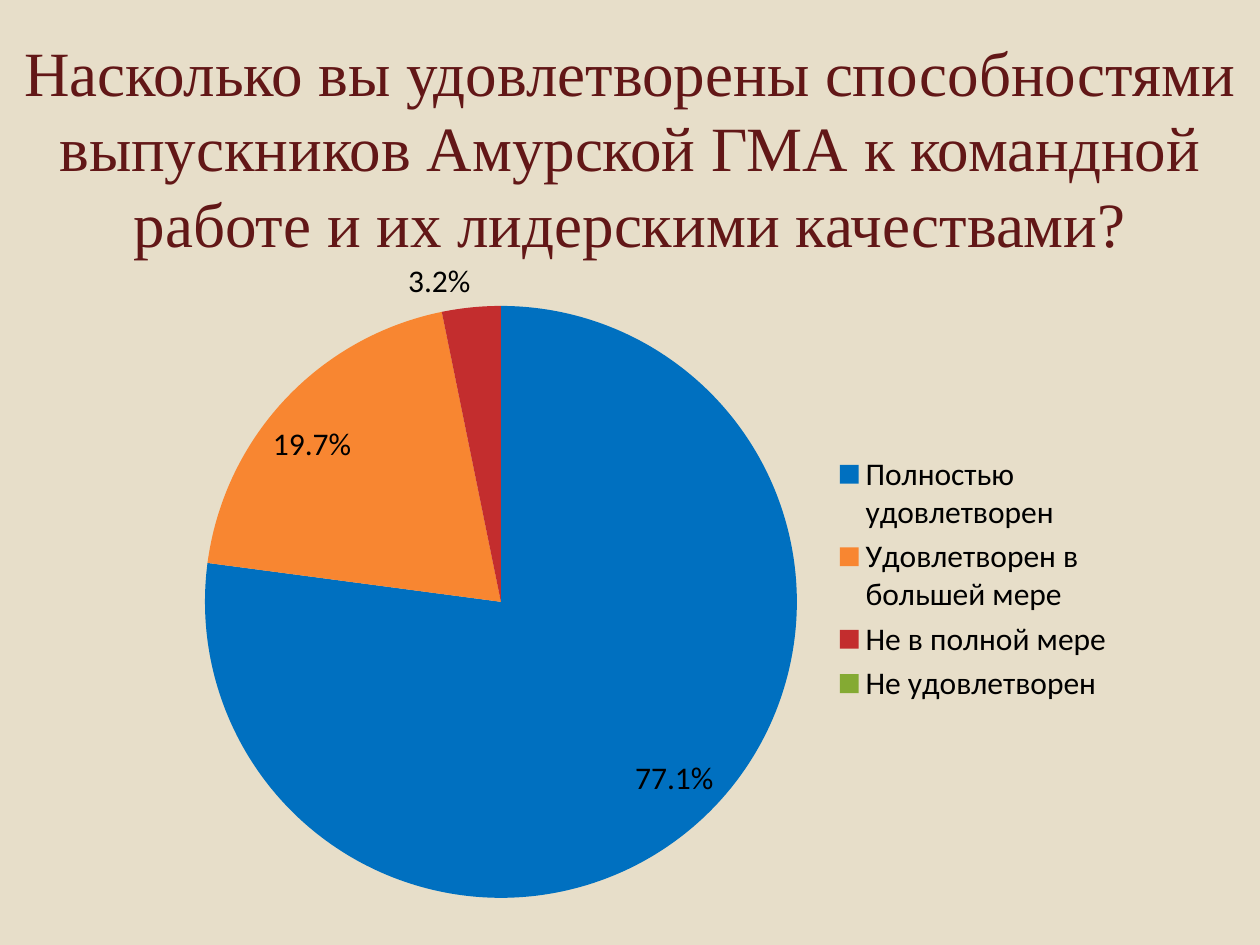
from dataclasses import dataclass

from lxml.etree import SubElement
from pptx import Presentation
from pptx.chart.data import CategoryChartData
from pptx.dml.color import RGBColor
from pptx.enum.chart import XL_CHART_TYPE as ChartType
from pptx.enum.chart import XL_LABEL_POSITION as LabelPosition
from pptx.enum.chart import XL_LEGEND_POSITION as LegendPosition
from pptx.enum.text import MSO_ANCHOR as Anchor
from pptx.enum.text import PP_ALIGN as Align
from pptx.oxml import parse_xml
from pptx.oxml.ns import nsdecls, qn
from pptx.util import Emu, Pt

PX_PER_INCH = 126


def px(length: int) -> Emu:
    return Emu(round(length * 914400 / PX_PER_INCH))


@dataclass(frozen=True)
class Theme:
    background: str = "E7DEC9"
    title: str = "621717"
    text: str = "000000"
    title_font: str = "Times New Roman"
    chart_font: str = "Calibri"
    title_size: int = 36
    chart_size: int = 18


@dataclass(frozen=True)
class Box:
    left: int
    top: int
    width: int
    height: int

    def emu(self) -> tuple:
        return px(self.left), px(self.top), px(self.width), px(self.height)


@dataclass(frozen=True)
class Answer:
    label: str
    percent: float
    color: str


THEME = Theme()
TITLE_BOX = Box(0, 38, 1260, 217)
CHART_BOX = Box(174, 244, 953, 670)
PIE_BOX = Box(205, 306, 592, 592)
TITLE = ("Насколько вы удовлетворены способностями выпускников "
         "Амурской ГМА к командной работе и их лидерскими качествами?")
ANSWERS = [
    Answer("Полностью удовлетворен", 77.1, "0070C0"),
    Answer("Удовлетворен в большей мере", 19.7, "F88631"),
    Answer("Не в полной мере", 3.2, "C32D2E"),
    Answer("Не удовлетворен", 0, "84AA33"),
]


def paint(fill, color: str) -> None:
    fill.solid()
    fill.fore_color.rgb = RGBColor.from_string(color)


def add_title(page, text: str) -> None:
    title = page.shapes.title
    title.left, title.top, title.width, title.height = TITLE_BOX.emu()
    frame = title.text_frame
    frame.text = text
    frame.word_wrap = True
    frame.vertical_anchor = Anchor.MIDDLE
    para = frame.paragraphs[0]
    para.alignment = Align.CENTER
    font = para.runs[0].font
    font.name, font.size = THEME.title_font, Pt(THEME.title_size)
    font.color.rgb = RGBColor.from_string(THEME.title)


def place_plot(chart, frame: Box, plot: Box) -> None:
    """Fix the plot area at a box inside the chart frame."""
    plot_area = chart.plots[0]._element.getparent()
    for old in plot_area.findall(qn("c:layout")):
        plot_area.remove(old)
    layout = parse_xml(f"<c:layout {nsdecls('c')}><c:manualLayout/></c:layout>")
    settings = {
        "layoutTarget": "inner", "xMode": "edge", "yMode": "edge",
        "x": round((plot.left - frame.left) / frame.width, 4),
        "y": round((plot.top - frame.top) / frame.height, 4),
        "w": round(plot.width / frame.width, 4),
        "h": round(plot.height / frame.height, 4),
    }
    for tag, value in settings.items():
        SubElement(layout[0], qn(f"c:{tag}")).set("val", str(value))
    plot_area.insert(0, layout)


def add_pie(page, answers: list[Answer]) -> None:
    data = CategoryChartData()
    data.categories = [answer.label for answer in answers]
    data.add_series("Series 1", [answer.percent for answer in answers])
    chart = page.shapes.add_chart(ChartType.PIE, *CHART_BOX.emu(), data).chart
    chart.has_title = False
    chart.font.name, chart.font.size = THEME.chart_font, Pt(THEME.chart_size)
    chart.font.color.rgb = RGBColor.from_string(THEME.text)
    chart.has_legend = True
    chart.legend.position = LegendPosition.RIGHT
    chart.legend.include_in_layout = False
    place_plot(chart, CHART_BOX, PIE_BOX)

    # Percentage labels
    plot = chart.plots[0]
    plot.vary_by_categories = True
    series = plot.series[0]
    labels = series.data_labels
    labels.show_percentage, labels.show_value = True, False
    labels.number_format, labels.number_format_is_linked = "0.0%", False
    labels.position = LabelPosition.BEST_FIT

    # Slice colours; an empty slice carries no label
    for index, answer in enumerate(answers):
        paint(series.points[index].format.fill, answer.color)
        if not answer.percent:
            labels._element.insert(0, parse_xml(
                f'<c:dLbl {nsdecls("c")}><c:idx val="{index}"/>'
                '<c:delete val="1"/></c:dLbl>'))


def main() -> None:
    deck = Presentation()
    deck.slide_width, deck.slide_height = px(1260), px(945)
    page = deck.slides.add_slide(deck.slide_layouts[5])
    paint(page.background.fill, THEME.background)
    add_pie(page, ANSWERS)
    add_title(page, TITLE)
    deck.save("out.pptx")


if __name__ == "__main__":
    main()
